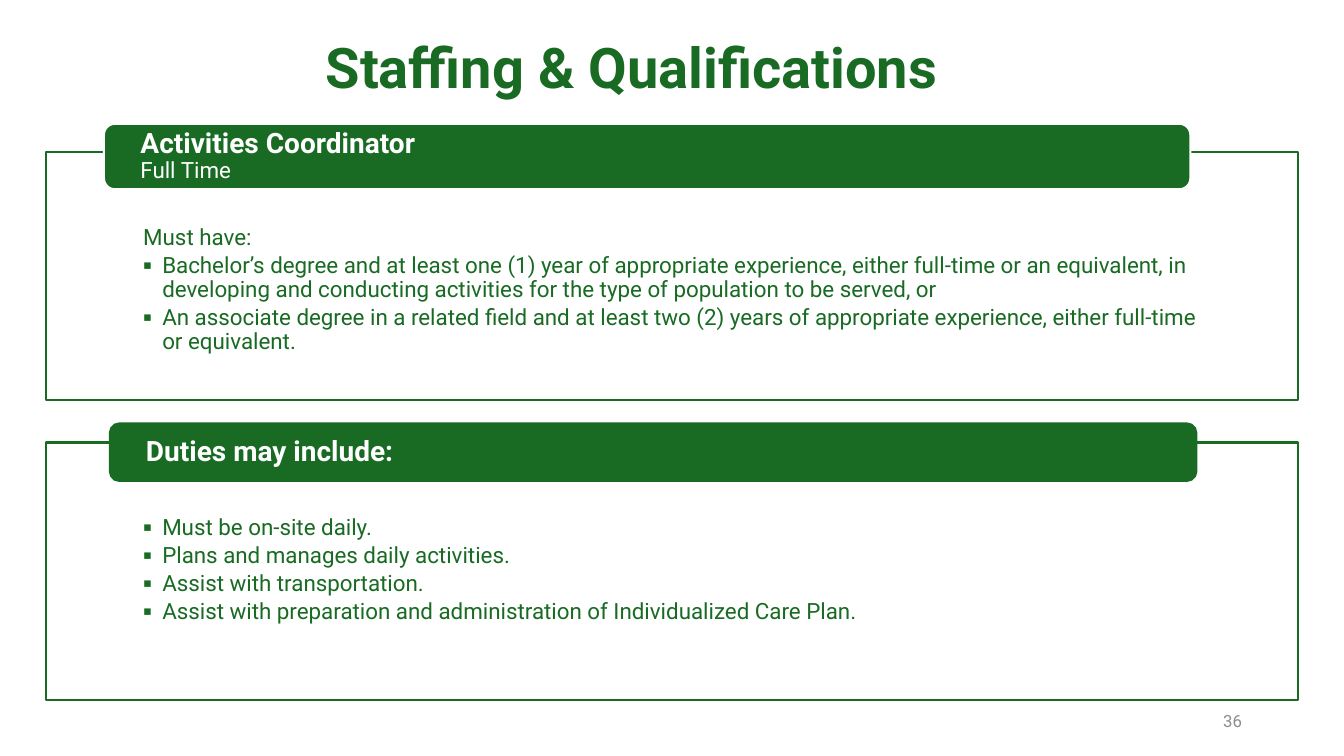
from lxml import etree
from pptx import Presentation
from pptx import util as u
from pptx.dml.color import RGBColor
from pptx.enum import shapes, text
from pptx.oxml import ns

COLORS = {"green": "196B24", "white": "FFFFFF", "grey": "8C8C8C"}
BULLET_INDENT = u.Cm(0.48)


def write(paragraph, wording, size, color, bold=False, **spacing):
    run = paragraph.add_run()
    run.text = wording
    font_format = {"name": "Roboto", "size": u.Pt(size), "bold": bold}
    for key, value in font_format.items():
        setattr(run.font, key, value)
    run.font.color.rgb = RGBColor.from_string(COLORS[color])
    for key, value in spacing.items():
        setattr(paragraph, key, value)


def add_block(kind, box, fill, line, frame_format):
    block = slide.shapes.add_shape(kind, *[u.Cm(length) for length in box])
    block.shadow.inherit = False
    block.fill.solid()
    block.fill.fore_color.rgb = RGBColor.from_string(COLORS[fill])
    block.line.color.rgb = RGBColor.from_string(COLORS[line])
    block.line.width = u.Pt(1.5)
    for key, value in frame_format.items():
        setattr(block.text_frame, key, value)
    return block


sections = [
    {
        "panel": (1.17, 3.84, 31.55, 6.25),
        "bar": (2.62, 3.12, 27.38, 1.65),
        "bar_line": "white",
        "heading": [("Activities Coordinator", 20, True), ("Full Time", 16, False)],
        "intro": ["Must have:"],
        "bullets": [
            "Bachelor’s degree and at least one (1) year of appropriate experience, "
            "either full-time or an equivalent, in developing and conducting "
            "activities for the type of population to be served, or",
            "An associate degree in a related field and at least two (2) years of "
            "appropriate experience, either full-time or equivalent.",
        ],
    },
    {
        "panel": (1.17, 11.15, 31.55, 6.48),
        "bar": (2.77, 10.67, 27.38, 1.45),
        "bar_line": "green",
        "heading": [("Duties may include:", 20, True)],
        "intro": [],
        "bullets": [
            "Must be on-site daily.",
            "Plans and manages daily activities.",
            "Assist with transportation.",
            "Assist with preparation and administration of Individualized Care Plan.",
        ],
    },
]
panel_format = {
    "word_wrap": True,
    "vertical_anchor": text.MSO_ANCHOR.TOP,
    "margin_left": u.Cm(2.44),
    "margin_right": u.Cm(2.44),
    "margin_top": u.Cm(1.85),
    "margin_bottom": u.Cm(0.3),
}
bar_format = {
    "word_wrap": True,
    "vertical_anchor": text.MSO_ANCHOR.MIDDLE,
    "margin_left": u.Cm(0.84),
    "margin_right": u.Cm(0.84),
    "margin_top": 0,
    "margin_bottom": 0,
}

prs = Presentation()
prs.slide_width, prs.slide_height = u.Cm(33.87), u.Cm(19.05)
slide = prs.slides.add_slide(prs.slide_layouts[5])

title = slide.shapes.title
title_box = {"left": 6.17, "top": 0.91, "width": 19.48, "height": 1.75}
for key, value in title_box.items():
    setattr(title, key, u.Cm(value))
title.text_frame.vertical_anchor = text.MSO_ANCHOR.MIDDLE
title.text_frame.auto_size = text.MSO_AUTO_SIZE.NONE
write(title.text_frame.paragraphs[0], "Staffing & Qualifications", 40, "green", True,
      alignment=text.PP_ALIGN.CENTER, line_spacing=0.9)

page_number = slide.shapes.add_textbox(u.Cm(23.93), u.Cm(17.65), u.Cm(7.62), u.Cm(1.02))
page_number.text_frame.word_wrap = True
page_number.text_frame.vertical_anchor = text.MSO_ANCHOR.MIDDLE
write(page_number.text_frame.paragraphs[0], "36", 12, "grey",
      alignment=text.PP_ALIGN.RIGHT)

for section in sections:
    panel = add_block(shapes.MSO_SHAPE.RECTANGLE, section["panel"], "white", "green", panel_format)
    panel_color = panel.fill._xPr.find(".//" + ns.qn("a:srgbClr"))
    etree.SubElement(panel_color, ns.qn("a:alpha"), val="90000")
    for index, wording in enumerate(section["intro"] + section["bullets"]):
        frame = panel.text_frame
        item = frame.add_paragraph() if index else frame.paragraphs[0]
        properties = item._p.get_or_add_pPr()
        properties.set("marL", str(BULLET_INDENT))
        properties.set("indent", str(-BULLET_INDENT))
        if wording in section["bullets"]:
            etree.SubElement(properties, ns.qn("a:buFont"), typeface="Roboto")
            etree.SubElement(properties, ns.qn("a:buChar"), char="▪")
        write(item, wording, 16, "green", alignment=text.PP_ALIGN.LEFT,
              line_spacing=0.9, space_after=u.Pt(2.8))

    bar = add_block(shapes.MSO_SHAPE.ROUNDED_RECTANGLE, section["bar"], "green",
                    section["bar_line"], bar_format)
    for index, (wording, size, bold) in enumerate(section["heading"]):
        frame = bar.text_frame
        heading = frame.add_paragraph() if index else frame.paragraphs[0]
        write(heading, wording, size, "white", bold,
              alignment=text.PP_ALIGN.LEFT, line_spacing=0.9)

prs.save("out.pptx")
